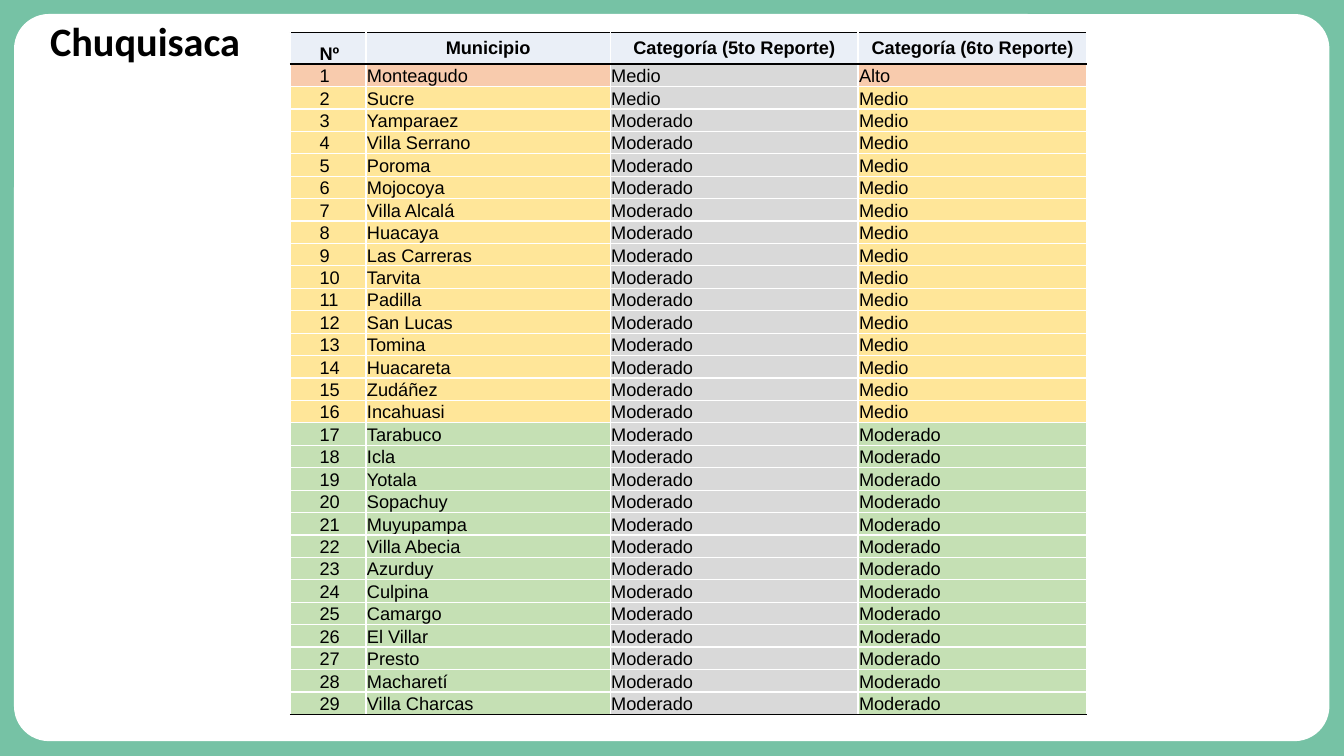
from lxml import etree
from pptx import Presentation
from pptx.dml.color import RGBColor
from pptx.enum.shapes import MSO_SHAPE
from pptx.enum.text import MSO_ANCHOR, PP_ALIGN
from pptx.oxml.ns import qn
from pptx.util import Pt

ROUNDED = MSO_SHAPE.ROUNDED_RECTANGLE
MIDDLE, BOTTOM = MSO_ANCHOR.MIDDLE, MSO_ANCHOR.BOTTOM
CENTER = PP_ALIGN.CENTER

GREEN, WHITE, BLACK = "76C2A5", "FFFFFF", "000000"
HEADER_FILL, PREVIOUS_FILL = "EAEFF7", "D9D9D9"
CATEGORY_FILLS = {"Alto": "F8CBAD", "Medio": "FFE699", "Moderado": "C5E0B4"}

HEADERS = ["Nº", "Municipio", "Categoría (5to Reporte)", "Categoría (6to Reporte)"]
COLUMN_WIDTHS = [54, 174.5, 177, 163.5]
HEADER_HEIGHT, ROW_HEIGHT = 22.8, 16.02
NUMBER_INDENT = 20.9

# Municipalities grouped by (5th report, 6th report) category
GROUPS = [
    ("Medio", "Alto", ["Monteagudo"]),
    ("Medio", "Medio", ["Sucre"]),
    ("Moderado", "Medio", [
        "Yamparaez", "Villa Serrano", "Poroma", "Mojocoya", "Villa Alcalá",
        "Huacaya", "Las Carreras", "Tarvita", "Padilla", "San Lucas",
        "Tomina", "Huacareta", "Zudáñez", "Incahuasi"]),
    ("Moderado", "Moderado", [
        "Tarabuco", "Icla", "Yotala", "Sopachuy", "Muyupampa",
        "Villa Abecia", "Azurduy", "Culpina", "Camargo", "El Villar",
        "Presto", "Macharetí", "Villa Charcas"]),
]


def rgb(value):
    return RGBColor.from_string(value)


def add_panel(s, left, top, width, height):
    panel = s.shapes.add_shape(ROUNDED, Pt(left), Pt(top), Pt(width), Pt(height))
    panel.adjustments[0] = 0.048
    panel.shadow.inherit = False
    panel.fill.solid()
    panel.fill.fore_color.rgb = rgb(WHITE)
    panel.line.fill.background()
    # The panel lies behind the title
    s.shapes.title.element.addprevious(panel.element)


def set_title(s, text, left, top, width, height):
    title = s.shapes.title
    title.left, title.top = Pt(left), Pt(top)
    title.width, title.height = Pt(width), Pt(height)
    tf = title.text_frame
    tf.text = text
    tf.vertical_anchor = MIDDLE
    p = tf.paragraphs[0]
    p.alignment = CENTER
    p.line_spacing = 0.9
    style_font(p.font, "Calibri", 28.8, True)


def style_font(font, name, size, bold):
    font.name = name
    font.size = Pt(size)
    font.bold = bold
    font.color.rgb = rgb(BLACK)


def set_borders(cell, top, bottom):
    tc_pr = cell._tc.get_or_add_tcPr()
    sides = {"lnL": WHITE, "lnR": WHITE, "lnT": top, "lnB": bottom}
    for side, color in sides.items():
        ln = etree.SubElement(tc_pr, qn(f"a:{side}"), w=str(Pt(1)))
        fill = etree.SubElement(ln, qn("a:solidFill"))
        etree.SubElement(fill, qn("a:srgbClr"), val=color)


def fill_cell(cell, text, fill, is_header, is_number, top, bottom):
    set_borders(cell, top, bottom)
    cell.fill.solid()
    cell.fill.fore_color.rgb = rgb(fill)
    inset = 0 if is_header or is_number else 0.72
    cell.margin_left = cell.margin_right = cell.margin_top = Pt(inset)
    cell.margin_bottom = 0
    cell.vertical_anchor = MIDDLE if is_header and not is_number else BOTTOM
    cell.text = text
    p = cell.text_frame.paragraphs[0]
    style_font(p.font, "Arial", 13, is_header)
    if is_number:
        p._p.get_or_add_pPr().set("indent", str(Pt(NUMBER_INDENT)))
    elif is_header:
        p.alignment = CENTER


def add_municipality_table(s, left, top):
    entries = [(name, fifth, sixth) for fifth, sixth, names in GROUPS for name in names]
    rows = [HEADERS] + [[str(n), *entry] for n, entry in enumerate(entries, 1)]
    last = len(rows) - 1
    height = HEADER_HEIGHT + last * ROW_HEIGHT
    table = s.shapes.add_table(len(rows), len(HEADERS), Pt(left), Pt(top),
                               Pt(sum(COLUMN_WIDTHS)), Pt(height)).table
    table.first_row = table.horz_banding = False
    for column, width in zip(table.columns, COLUMN_WIDTHS):
        column.width = Pt(width)

    for i, row in enumerate(rows):
        is_header = i == 0
        table.rows[i].height = Pt(HEADER_HEIGHT if is_header else ROW_HEIGHT)
        # Black rules above and below the header and under the last row
        above = BLACK if i <= 1 else WHITE
        below = BLACK if i in (0, last) else WHITE
        for j, text in enumerate(row):
            if is_header:
                fill = HEADER_FILL
            elif j == 2:
                fill = PREVIOUS_FILL
            else:
                fill = CATEGORY_FILLS[row[3]]
            fill_cell(table.cell(i, j), text, fill, is_header, j == 0, above, below)


def build_slide(prs):
    s = prs.slides.add_slide(prs.slide_layouts[5])
    s.background.fill.solid()
    s.background.fill.fore_color.rgb = rgb(GREEN)
    add_panel(s, 10, 10, 939.6, 519.4)
    set_title(s, "Chuquisaca", 10.8, 11.5, 185.8, 39.6)
    add_municipality_table(s, 207.4, 23)


def main():
    prs = Presentation()
    prs.slide_width, prs.slide_height = Pt(960), Pt(540)
    build_slide(prs)
    prs.save("out.pptx")


if __name__ == "__main__":
    main()
